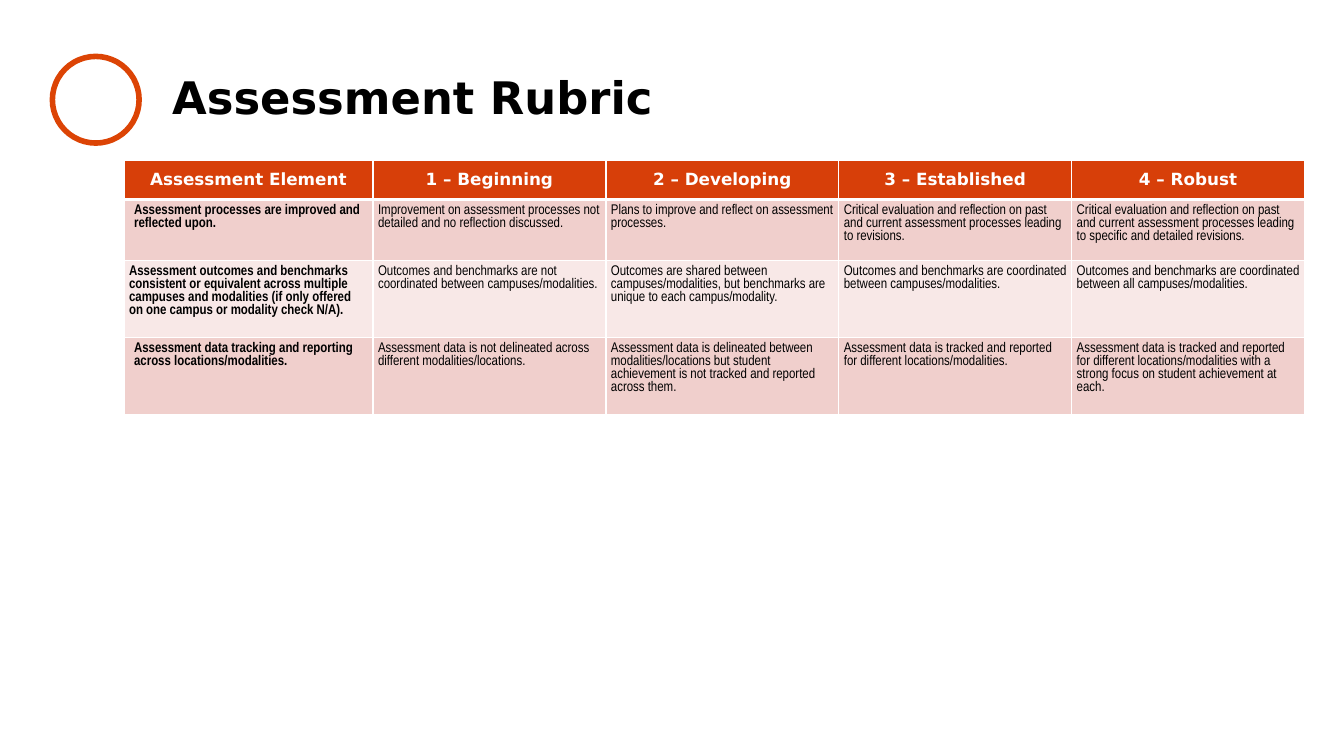
from lxml import etree
from pptx import Presentation
from pptx.dml.color import RGBColor
from pptx.enum.shapes import MSO_SHAPE
from pptx.enum.text import MSO_ANCHOR, PP_ALIGN
from pptx.oxml.ns import qn
from pptx.util import Emu, Inches, Pt

OVAL = MSO_SHAPE.OVAL
TOP, MIDDLE = MSO_ANCHOR.TOP, MSO_ANCHOR.MIDDLE
LEFT, CENTER = PP_ALIGN.LEFT, PP_ALIGN.CENTER
COLORS = {
    "white": "FFFFFF",
    "black": "000000",
    "ring": "DC4405",
    "header": "D73F09",
    "odd": "F0CFCC",
    "even": "F8E8E7",
}
HEADING_FONT, BODY_FONT = "DejaVu Sans", "Arial Narrow"
COLUMN_WIDTHS = [2.47] + [2.31] * 4
ROW_HEIGHTS = [0.39, 0.49, 0.61, 0.61]
CELL_INSET = 0.05
RUBRIC = [
    ["Assessment Element", "1 – Beginning", "2 – Developing", "3 – Established", "4 – Robust"],
    [
        "Assessment processes are improved and reflected upon.",
        "Improvement on assessment processes not detailed and no reflection discussed.",
        "Plans to improve and reflect on assessment processes.",
        "Critical evaluation and reflection on past and current assessment processes "
        "leading to revisions.",
        "Critical evaluation and reflection on past and current assessment processes "
        "leading to specific and detailed revisions.",
    ],
    [
        "Assessment outcomes and benchmarks consistent or equivalent across multiple campuses "
        "and modalities (if only offered on one campus or modality check N/A).",
        "Outcomes and benchmarks are not coordinated between campuses/modalities.",
        "Outcomes are shared between campuses/modalities, but benchmarks are unique "
        "to each campus/modality.",
        "Outcomes and benchmarks are coordinated between campuses/modalities.",
        "Outcomes and benchmarks are coordinated between all campuses/modalities.",
    ],
    [
        "Assessment data tracking and reporting across locations/modalities.",
        "Assessment data is not delineated across different modalities/locations.",
        "Assessment data is delineated between modalities/locations but student achievement "
        "is not tracked and reported across them.",
        "Assessment data is tracked and reported for different locations/modalities.",
        "Assessment data is tracked and reported for different locations/modalities "
        "with a strong focus on student achievement at each.",
    ],
]


def color(name):
    """Return the named colour of the palette."""
    return RGBColor.from_string(COLORS[name])


def write(frame, text, font=BODY_FONT, size=10, ink="black", bold=False, align=LEFT, spacing=None):
    """Put one formatted paragraph into a text frame."""
    para = frame.paragraphs[0]
    para.alignment = align
    para.line_spacing = spacing
    span = para.add_run()
    span.text = text
    span.font.name = font
    span.font.size = Pt(size)
    span.font.bold = bold
    span.font.color.rgb = color(ink)


def add_ring(page, left, top, size):
    """Draw the outlined circle beside the title."""
    ring = page.shapes.add_shape(OVAL, Inches(left), Inches(top), Inches(size), Inches(size))
    ring.shadow.inherit = False
    ring.fill.solid()
    ring.fill.fore_color.rgb = color("white")
    ring.line.color.rgb = color("ring")
    ring.line.width = Pt(4)


def add_title(page, text, left, top, width, height):
    """Add the slide heading."""
    box = page.shapes.add_textbox(Inches(left), Inches(top), Inches(width), Inches(height))
    frame = box.text_frame
    frame.word_wrap = True
    frame.vertical_anchor = MIDDLE
    write(frame, text, font=HEADING_FONT, size=32, bold=True, spacing=0.9)


def set_borders(cell, **widths):
    """Give a cell white borders, with widths in points by side."""
    properties = cell._tc.get_or_add_tcPr()
    for side in "LRTB":
        line = etree.SubElement(properties, qn(f"a:ln{side}"), w=str(Pt(widths.get(side, 1))))
        fill = etree.SubElement(line, qn("a:solidFill"))
        etree.SubElement(fill, qn("a:srgbClr"), val=COLORS["white"])


def format_cell(cell, text, row, column):
    """Fill one rubric cell according to its row and column."""
    cell.margin_left = cell.margin_right = Inches(CELL_INSET)
    cell.margin_top = cell.margin_bottom = Inches(CELL_INSET)
    if row == 0:
        set_borders(cell, B=3)
        cell.vertical_anchor = MIDDLE
        write(cell.text_frame, text, font=HEADING_FONT, size=12, ink="white",
              bold=True, align=CENTER)
        fill = "header"
    else:
        set_borders(cell, T=3 if row == 1 else 1)
        cell.vertical_anchor = TOP
        write(cell.text_frame, text, bold=column == 0)
        fill = "odd" if row % 2 else "even"
        if column == 0 and row % 2:
            para = cell.text_frame.paragraphs[0]
            para._p.get_or_add_pPr().set("marL", str(Inches(0.05)))
    cell.fill.solid()
    cell.fill.fore_color.rgb = color(fill)


def add_rubric(page, left, top):
    """Add the rubric table."""
    width, height = Inches(sum(COLUMN_WIDTHS)), Inches(sum(ROW_HEIGHTS))
    table = page.shapes.add_table(len(ROW_HEIGHTS), len(COLUMN_WIDTHS),
                                  Inches(left), Inches(top), Emu(width), Emu(height)).table
    table.horz_banding = False
    for column, column_width in zip(table.columns, COLUMN_WIDTHS):
        column.width = Inches(column_width)
    for row, row_height in zip(table.rows, ROW_HEIGHTS):
        row.height = Inches(row_height)
    for row, texts in enumerate(RUBRIC):
        for column, text in enumerate(texts):
            format_cell(table.cell(row, column), text, row, column)


def main():
    """Build and save the slide."""
    deck = Presentation()
    deck.slide_width, deck.slide_height = Inches(13.33), Inches(7.5)
    page = deck.slides.add_slide(deck.slide_layouts[6])
    add_ring(page, 0.52, 0.56, 0.86)
    add_title(page, "Assessment Rubric", 1.61, 0.59, 10.8, 0.81)
    add_rubric(page, 1.23, 1.59)
    deck.save("out.pptx")


if __name__ == "__main__":
    main()
